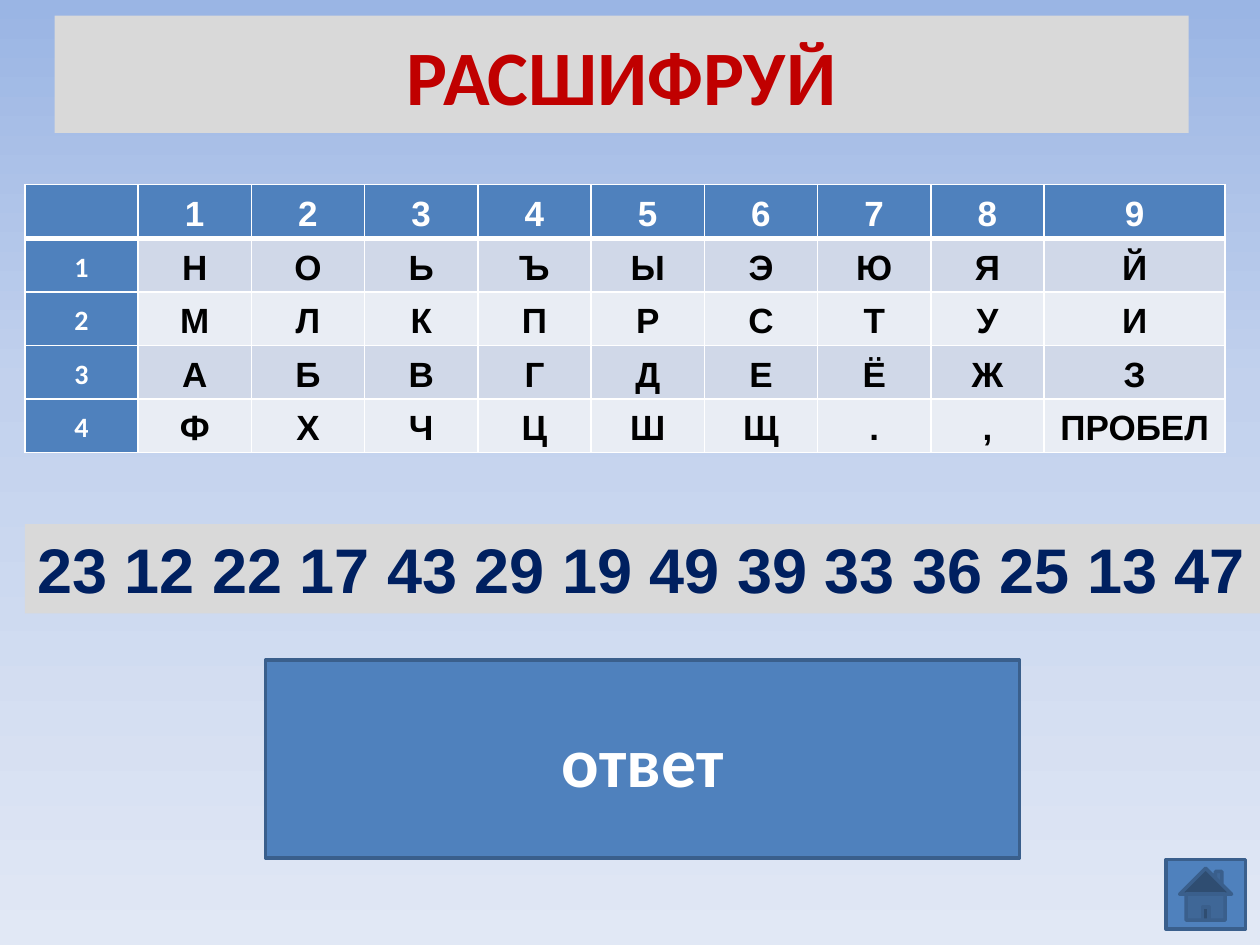
from dataclasses import dataclass

from lxml import etree
from pptx import Presentation
from pptx.dml.color import RGBColor
from pptx.enum.shapes import MSO_SHAPE
from pptx.enum.text import MSO_ANCHOR, PP_ALIGN
from pptx.oxml.ns import qn
from pptx.util import Pt

RECTANGLE = MSO_SHAPE.RECTANGLE
HOME_BUTTON = MSO_SHAPE.ACTION_BUTTON_HOME
MIDDLE = MSO_ANCHOR.MIDDLE
LEFT, CENTER = PP_ALIGN.LEFT, PP_ALIGN.CENTER


@dataclass(frozen=True)
class Theme:
    white: str = "FFFFFF"
    black: str = "000000"
    red: str = "C00000"
    navy: str = "002060"
    panel: str = "D9D9D9"
    blue: str = "4F81BD"
    outline: str = "3A5F8C"
    bands: tuple = ("D0D8E8", "E9EDF4")
    backdrop: tuple = ((0, "9AB5E4"), (41, "C2D1ED"), (100, "E1E8F5"))
    heading: str = "Calibri"
    body: str = "Arial"
    title_size: float = 44
    answer_size: float = 40
    code_size: float = 36
    cell_size: float = 20
    row_label_size: float = 16


THEME = Theme()

LETTER_ROWS = [
    ["Н", "О", "Ь", "Ъ", "Ы", "Э", "Ю", "Я", "Й"],
    ["М", "Л", "К", "П", "Р", "С", "Т", "У", "И"],
    ["А", "Б", "В", "Г", "Д", "Е", "Ё", "Ж", "З"],
    ["Ф", "Х", "Ч", "Ц", "Ш", "Щ", ".", ",", "ПРОБЕЛ"],
]


def rgb(color):
    return RGBColor.from_string(color)


def write_text(frame, text, font, size, color, align=CENTER, spacing=None):
    para = frame.paragraphs[0]
    para.alignment = align
    para.line_spacing = spacing
    span = para.add_run()
    span.text = text
    for name, value in {"name": font, "size": Pt(size), "bold": True}.items():
        setattr(span.font, name, value)
    span.font.color.rgb = rgb(color)


def add_panel(page, box, fill, outline=None, kind=RECTANGLE):
    panel = page.shapes.add_shape(kind, *map(Pt, box))
    panel.shadow.inherit = False
    panel.fill.solid()
    panel.fill.fore_color.rgb = rgb(fill)
    if outline:
        panel.line.color.rgb = rgb(outline)
        panel.line.width = Pt(2)
    else:
        panel.line.fill.background()
    return panel


def set_background(page):
    fill = page.background.fill
    fill.gradient()
    fill.gradient_angle = 270
    stops = page.element.find(".//" + qn("a:gsLst"))
    stops.clear()
    for percent, color in THEME.backdrop:
        stop = etree.SubElement(stops, qn("a:gs"), pos=str(percent * 1000))
        etree.SubElement(stop, qn("a:srgbClr"), val=color)


def add_title(page, box):
    panel = add_panel(page, box, THEME.panel)
    panel.text_frame.vertical_anchor = MIDDLE
    write_text(panel.text_frame, "РАСШИФРУЙ", THEME.heading, THEME.title_size, THEME.red)


def set_borders(cell, widths):
    properties = cell._tc.get_or_add_tcPr()
    for index, (side, width) in enumerate(widths.items()):
        line = etree.Element(qn("a:ln" + side), w=str(Pt(width)))
        fill = etree.SubElement(line, qn("a:solidFill"))
        etree.SubElement(fill, qn("a:srgbClr"), val=THEME.white)
        properties.insert(index, line)


def style_cell(cell, row, column, text):
    # Header row and label column are blue, the letters sit on bands
    is_head = row == 0 or column == 0
    cell.fill.solid()
    cell.fill.fore_color.rgb = rgb(THEME.blue if is_head else THEME.bands[(row - 1) % 2])
    layout = {"vertical_anchor": MIDDLE, "margin_left": Pt(5), "margin_right": Pt(5),
              "margin_top": 0, "margin_bottom": 0}
    for name, value in layout.items():
        setattr(cell, name, value)
    set_borders(cell, {"L": 1, "R": 1, "T": 3 if row == 1 else 1, "B": 3 if row == 0 else 1})
    if text:
        is_label = row > 0 and column == 0
        write_text(cell.text_frame, text,
                   THEME.heading if is_label else THEME.body,
                   THEME.row_label_size if is_label else THEME.cell_size,
                   THEME.white if is_head else THEME.black, spacing=1.15)


def add_cipher_table(page, box, last_width):
    rows = [[""] + [str(number) for number in range(1, 10)]]
    rows += [[str(number)] + letters for number, letters in enumerate(LETTER_ROWS, 1)]
    row_count, column_count = len(rows), len(rows[0])
    table = page.shapes.add_table(row_count, column_count, *map(Pt, box)).table
    for column in table.columns:
        column.width = Pt((box[2] - last_width) / (column_count - 1))
    table.columns[column_count - 1].width = Pt(last_width)
    for row, texts in enumerate(rows):
        table.rows[row].height = Pt(box[3] / row_count)
        for column, text in enumerate(texts):
            style_cell(table.cell(row, column), row, column, text)


def add_code(page, box):
    panel = add_panel(page, box, THEME.panel)
    panel.text_frame.word_wrap = False
    panel.text_frame.vertical_anchor = MIDDLE
    write_text(panel.text_frame, "23 12 22 17 43 29 19 49 39 33 36 25 13 47",
               THEME.body, THEME.code_size, THEME.navy, LEFT)


def add_answer(page, box):
    panel = add_panel(page, box, THEME.blue, THEME.outline)
    panel.text_frame.vertical_anchor = MIDDLE
    write_text(panel.text_frame, "ответ", THEME.heading, THEME.answer_size, THEME.white)


def add_home_button(page, box):
    add_panel(page, box, THEME.blue, THEME.outline, HOME_BUTTON)


def main():
    deck = Presentation()
    deck.slide_width, deck.slide_height = Pt(720), Pt(540)
    page = deck.slides.add_slide(deck.slide_layouts[6])
    set_background(page)
    # Boxes are left, top, width, height
    add_title(page, (31.2, 9, 648, 67))
    add_cipher_table(page, (14.2, 105.5, 686, 153.2), last_width=103.5)
    add_code(page, (14.2, 299.5, 705.8, 51))
    add_answer(page, (151.8, 377.2, 430.8, 113.2))
    add_home_button(page, (666.2, 491.2, 45.5, 39.6))
    deck.save("out.pptx")


if __name__ == "__main__":
    main()
